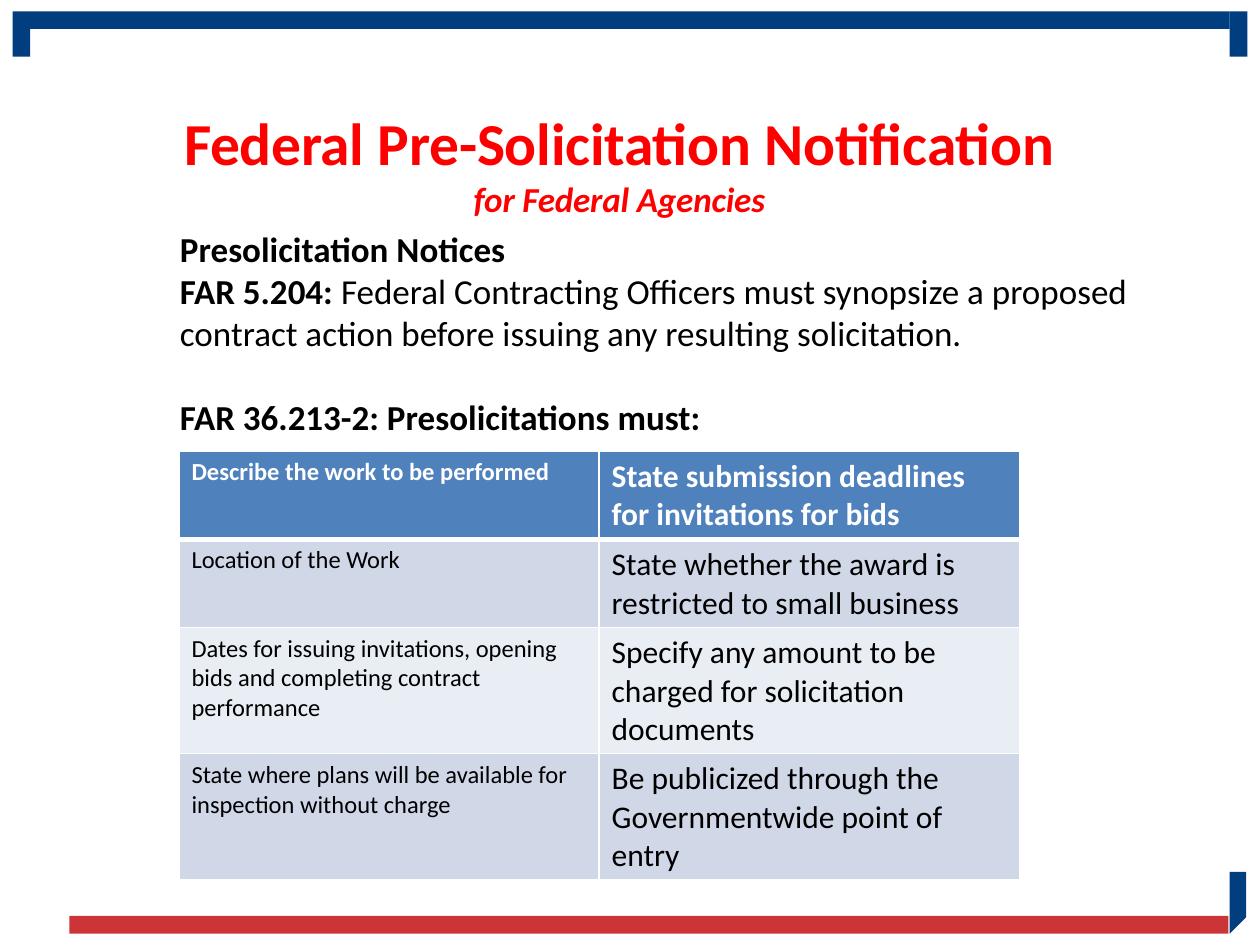
import pptx
import pptx.dml.color
import pptx.enum.shapes
import pptx.enum.text
import pptx.oxml
import pptx.oxml.ns
import pptx.util
from dataclasses import dataclass

Inches, Pt = pptx.util.Inches, pptx.util.Pt
NS = pptx.oxml.ns.nsdecls("a")


@dataclass(frozen=True)
class Theme:
    font: str = "Calibri"
    navy: str = "003E80"
    red_bar: str = "CC3538"
    title: str = "FF0000"
    text: str = "000000"
    white: str = "FFFFFF"
    header: str = "4F81BD"
    bands: tuple = ("D0D8E8", "E9EDF4")
    title_size: int = 34
    body_size: int = 20
    column_sizes: tuple = (14, 18)


def rgb(value):
    return pptx.dml.color.RGBColor.from_string(value)


class SlideBuilder:
    def __init__(self, slide, theme):
        self.s, self.theme = slide, theme

    def style(self, font, size, color, bold=None, italic=None):
        font.name, font.size = self.theme.font, Pt(size)
        font.color.rgb = rgb(color)
        font.bold, font.italic = bold, italic

    def paint(self, sp, color):
        sp.shadow.inherit = False
        sp.fill.solid()
        sp.fill.fore_color.rgb = rgb(color)
        sp.line.fill.background()

    def bar(self, color, *box):
        kind = pptx.enum.shapes.MSO_SHAPE.RECTANGLE
        self.paint(self.s.shapes.add_shape(kind, *map(Inches, box)), color)

    def outline(self, color, points):
        pts = [(Inches(x), Inches(y)) for x, y in points]
        builder = self.s.shapes.build_freeform(*pts[0])
        builder.add_line_segments(pts[1:], close=True)
        self.paint(builder.convert_to_shape(), color)

    def text_box(self, *box):
        tf = self.s.shapes.add_textbox(*map(Inches, box)).text_frame
        tf.word_wrap = True
        return tf

    def title(self, heading, subtitle, *box):
        t = self.theme
        tf = self.text_box(*box)
        tf.margin_left = tf.margin_right = tf.margin_bottom = 0
        tf.margin_top = Inches(0.01)
        p = tf.paragraphs[0]
        p.alignment = pptx.enum.text.PP_ALIGN.CENTER
        r = p.add_run()
        r.text = heading
        self.style(r.font, t.title_size, t.title, bold=True)
        r.font._element.set("spc", "-10")
        p.add_line_break()
        r = p.add_run()
        r.text = subtitle
        self.style(r.font, t.body_size, t.title, bold=True, italic=True)
        r.font._element.set("spc", "-10")

    def body(self, paragraphs, *box):
        """Each paragraph is (space before, [(text, bold), ...])."""
        tf = self.text_box(*box)
        for i, (gap, runs) in enumerate(paragraphs):
            p = tf.add_paragraph() if i else tf.paragraphs[0]
            if gap:
                p.space_before = Pt(gap)
            self.style(p.font, self.theme.body_size, self.theme.text)
            for text, bold in runs:
                r = p.add_run()
                r.text = text
                r.font.bold = bold

    def borders(self, cell, top, bottom):
        props = cell._tc.get_or_add_tcPr()
        sides = (("L", 1), ("R", 1), ("T", top), ("B", bottom))
        for i, (side, width) in enumerate(sides):
            props.insert(i, pptx.oxml.parse_xml(
                f'<a:ln{side} {NS} w="{Pt(width)}"><a:solidFill>'
                f'<a:srgbClr val="{self.theme.white}"/></a:solidFill></a:ln{side}>'))

    def table(self, rows, heights, left, top, width):
        t = self.theme
        table = self.s.shapes.add_table(
            len(rows), len(rows[0]), Inches(left), Inches(top),
            Inches(width), Inches(sum(heights))).table
        table.horz_banding = False
        for i, (row, height) in enumerate(zip(rows, heights)):
            table.rows[i].height = Inches(height)
            header = i == 0
            for j, text in enumerate(row):
                cell = table.cell(i, j)
                cell.text = text
                cell.fill.solid()
                cell.fill.fore_color.rgb = rgb(
                    t.header if header else t.bands[(i - 1) % 2])
                self.borders(cell, 3 if i == 1 else 1, 3 if header else 1)
                self.style(cell.text_frame.paragraphs[0].font, t.column_sizes[j],
                           t.white if header else t.text, bold=header)


def main():
    prs = pptx.Presentation()
    prs.slide_width, prs.slide_height = Inches(10), Inches(7.5)
    theme = Theme()
    b = SlideBuilder(prs.slides.add_slide(prs.slide_layouts[6]), theme)

    # Frame: top bracket, top right corner, bottom bar, bottom right corner
    b.outline(theme.navy, [(0.1, 0.09), (9.76, 0.09), (9.76, 0.23),
                           (0.24, 0.23), (0.24, 0.45), (0.1, 0.45)])
    b.bar(theme.navy, 9.76, 0.09, 0.14, 0.36)
    b.bar(theme.red_bar, 0.55, 7.27, 9.2, 0.14)
    b.outline(theme.navy, [(9.76, 6.92), (9.89, 6.92), (9.89, 7.28), (9.76, 7.41)])

    # Title
    b.title("Federal Pre-Solicitation Notification", "for Federal Agencies",
            0.58, 0.83, 8.67, 0.92)

    # Regulations
    b.body([
        (0, [("Presolicitation Notices", True)]),
        (0, [("FAR 5.204: ", True),
             ("Federal Contracting Officers must synopsize a proposed contract "
              "action before issuing any resulting solicitation.", False)]),
        (24, [("FAR 36.213-2: Presolicitations must:", True)]),
    ], 1.33, 1.76, 8.16, 3.8)

    # Requirements
    b.table([
        ("Describe the work to be performed",
         "State submission deadlines for invitations for bids"),
        ("Location of the Work",
         "State whether the award is restricted to small business"),
        ("Dates for issuing invitations, opening bids and completing contract performance",
         "Specify any amount to be charged for solicitation documents"),
        ("State where plans will be available for inspection without charge",
         "Be publicized through the Governmentwide point of entry"),
    ], (0.7, 0.7, 1, 1), 1.42, 3.58, 6.67)

    prs.save("out.pptx")


if __name__ == "__main__":
    main()
